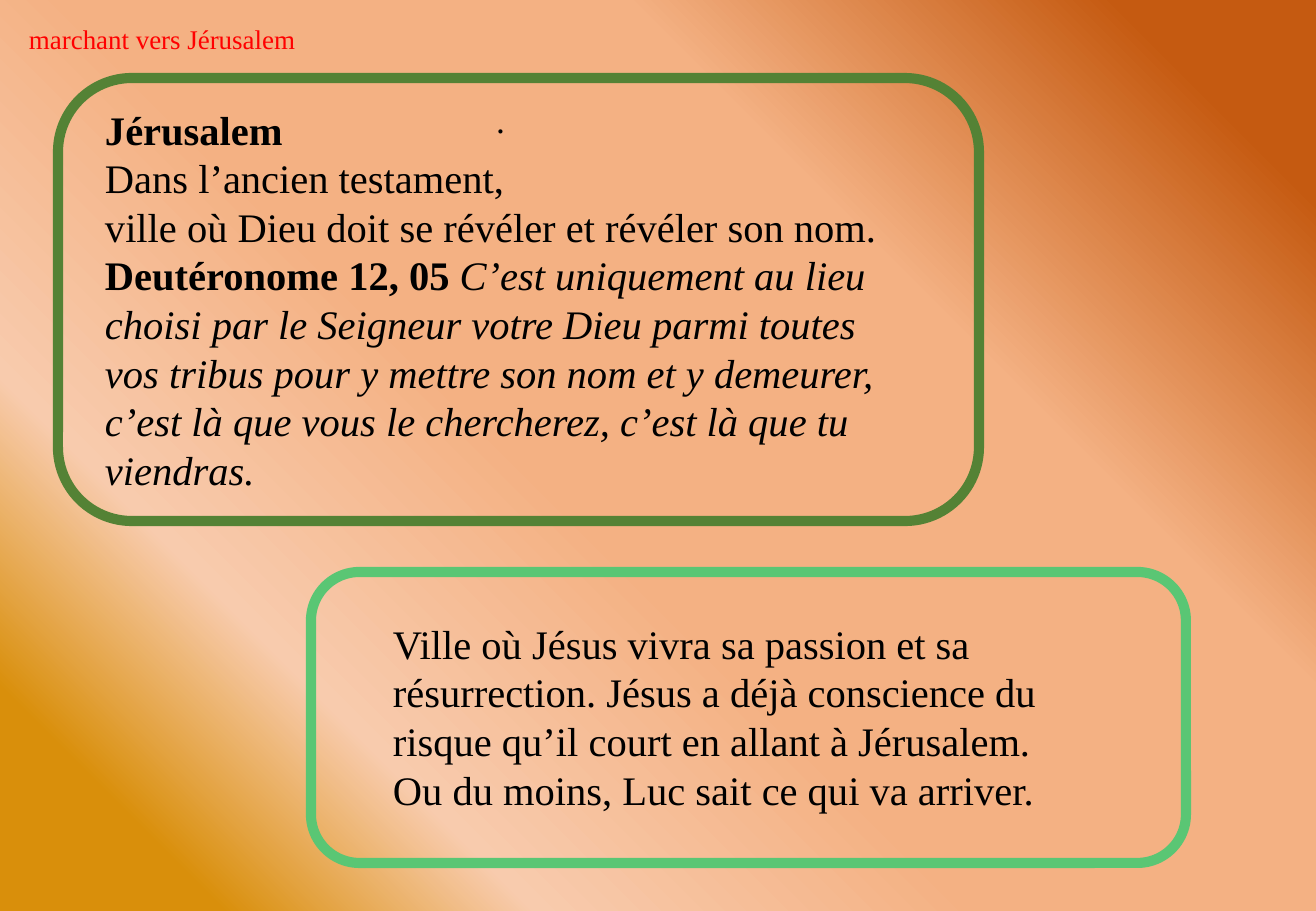
from pptx import Presentation
from pptx.dml.color import RGBColor
from pptx.enum.shapes import MSO_SHAPE
from pptx.enum.text import MSO_ANCHOR, MSO_AUTO_SIZE, PP_ALIGN
from pptx.oxml.ns import qn
from pptx.util import Pt
from lxml.etree import SubElement

PX = 7526  # EMU per px
THEME = {
    "font": "Times New Roman",
    "text": "000000",
    "heading": "FF0000",
    "old_testament": "548235",
    "passion": "5AC674",
    "heading_size": 16,
    "dot_size": 21,
    "body_size": 24,
    "frame_width": 6,
    "background": [(9, "C55A11"), (31, "F4B183"), (56, "F4B183"),
                   (76, "F8CBAD"), (90, "D98F0B")],
}


def place(shape, box):
    shape.left, shape.top, shape.width, shape.height = [value * PX for value in box]


def write(shape, paragraphs, size, color=THEME["text"], align=PP_ALIGN.LEFT,
          anchor=MSO_ANCHOR.TOP, wrap=True, inset=(11, 5)):
    """Each paragraph is a list of (text, bold, italic) runs."""
    frame = shape.text_frame
    frame.word_wrap = wrap
    frame.auto_size = MSO_AUTO_SIZE.SHAPE_TO_FIT_TEXT
    frame.vertical_anchor = anchor
    frame.margin_left = frame.margin_right = inset[0] * PX
    frame.margin_top = frame.margin_bottom = inset[1] * PX
    for index, runs in enumerate(paragraphs):
        paragraph = frame.add_paragraph() if index else frame.paragraphs[0]
        paragraph.alignment = align
        for text, bold, italic in runs:
            run = paragraph.add_run()
            run.text = text
            run.font.name = THEME["font"]
            run.font.size = Pt(size)
            run.font.bold = bold
            run.font.italic = italic
            run.font.color.rgb = RGBColor.from_string(color)


presentation = Presentation()
presentation.slide_width = 1316 * PX
presentation.slide_height = 911 * PX
slide = presentation.slides.add_slide(presentation.slide_layouts[5])

# Diagonal background gradient, from top right to bottom left
background_fill = slide.background.fill
background_fill.gradient()
background_fill.gradient_angle = 225
stop_list = slide.element.find(".//" + qn("a:gsLst"))
for stop in list(stop_list):
    stop_list.remove(stop)
for percent, color in THEME["background"]:
    stop = SubElement(stop_list, qn("a:gs"), pos=str(percent * 1000))
    SubElement(stop, qn("a:srgbClr"), val=color)

# Rounded frames
for box, color in [((58, 78, 921, 443), THEME["old_testament"]),
                   ((311, 572, 875, 291), THEME["passion"])]:
    frame_shape = slide.shapes.add_shape(MSO_SHAPE.ROUNDED_RECTANGLE,
                                         *[value * PX for value in box])
    frame_shape.shadow.inherit = False
    frame_shape.fill.background()
    frame_shape.line.color.rgb = RGBColor.from_string(color)
    frame_shape.line.width = Pt(THEME["frame_width"])

# Heading
title = slide.shapes.title
place(title, (18, 18, 292, 44))
write(title, [[("marchant vers Jérusalem", False, False)]],
      size=THEME["heading_size"], color=THEME["heading"], wrap=False)

# Texts inside the frames
dot = [[(". ", False, False)]]
old_testament = [
    [("Jérusalem", True, False)],
    [("Dans l’ancien testament,", False, False)],
    [("ville où Dieu doit se révéler et révéler son nom.", False, False)],
    [("Deutéronome 12, 05", True, False),
     (" C’est uniquement au lieu choisi par le Seigneur votre Dieu parmi toutes "
      "vos tribus pour y mettre son nom et y demeurer, c’est là que vous le "
      "chercherez, c’est là que tu viendras.", False, True)],
]
passion = [
    [("Ville où Jésus vivra sa passion et sa résurrection. Jésus a déjà conscience "
      "du risque qu’il court en allant à Jérusalem.", False, False)],
    [("Ou du moins, Luc sait ce qui va arriver.", False, False)],
]
body_format = {"size": THEME["body_size"], "anchor": MSO_ANCHOR.MIDDLE}
dot_format = {"size": THEME["dot_size"], "align": PP_ALIGN.CENTER, "inset": (12, 6)}
for box, paragraphs, text_format in [
    ((94, 92, 822, 61), dot, dot_format),
    ((94, 97, 831, 404), old_testament, body_format),
    ((382, 613, 760, 206), passion, body_format),
]:
    text_box = slide.shapes.add_textbox(*[value * PX for value in box])
    write(text_box, paragraphs, **text_format)

presentation.save("out.pptx")
